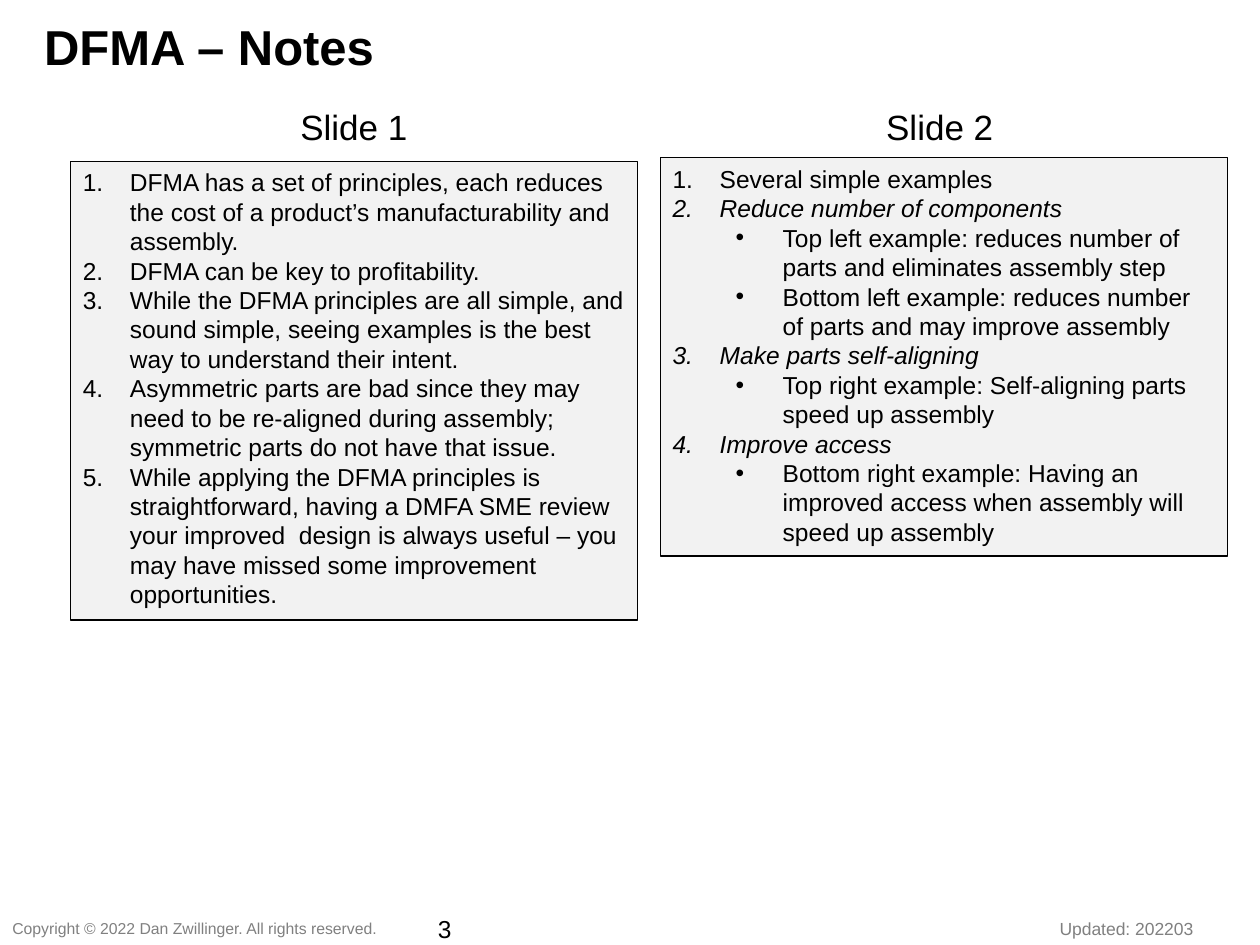
"""Build the DFMA notes slide."""
from dataclasses import dataclass

from lxml import etree
from pptx import Presentation
from pptx.dml.color import RGBColor
from pptx.enum.shapes import MSO_SHAPE
from pptx.enum.text import MSO_ANCHOR, PP_ALIGN
from pptx.oxml.ns import qn
from pptx.util import Cm, Pt

RECT = MSO_SHAPE.RECTANGLE
TOP = MSO_ANCHOR.TOP
LEFT, MID, RIGHT = PP_ALIGN.LEFT, PP_ALIGN.CENTER, PP_ALIGN.RIGHT
COLORS = {"ink": "000000", "gray": "808080", "panel": "F2F2F2"}
FONT = "Arial"
HANG = Cm(0.95)
STEP = Cm(1.27)
WIDTH = 11.43


@dataclass
class Item:
    text: str
    level: int = 0
    italic: bool = False


@dataclass
class Label:
    text: str
    box: tuple
    size: int
    color: str = "ink"
    bold: bool = False
    align: PP_ALIGN = LEFT
    wrap: bool = True


@dataclass
class Panel:
    box: tuple
    items: list


LABELS = [
    Label("DFMA – Notes", (0.64, 0.2, 24.1, 1.45), 28, bold=True),
    Label("Slide 1", (1.42, 2.01, WIDTH, 1.12), 20, align=MID),
    Label("Slide 2", (13.23, 2.01, WIDTH, 1.12), 20, align=MID),
    Label("Copyright © 2022 Dan Zwillinger. All rights reserved.",
          (0, 18.39, 7.95, 0.64), 9, "gray", wrap=False),
    Label("Updated: 202203", (21.11, 18.39, 3.23, 0.69), 10, "gray", wrap=False),
    Label("3", (7.95, 18.31, 1.4, 0.69), 14, align=RIGHT),
]
PANELS = [
    Panel((1.42, 3.25, WIDTH, 9.25), [
        Item("DFMA has a set of principles, each reduces the cost of a "
             "product’s manufacturability and assembly."),
        Item("DFMA can be key to profitability."),
        Item("While the DFMA principles are all simple, and sound simple, "
             "seeing examples is the best way to understand their intent."),
        Item("Asymmetric parts are bad since they may need to be re-aligned "
             "during assembly; symmetric parts do not have that issue."),
        Item("While applying the DFMA principles is straightforward, having a "
             "DMFA SME review your improved  design is always useful – you "
             "may have missed some improvement opportunities."),
    ]),
    Panel((13.31, 3.18, WIDTH, 8.03), [
        Item("Several simple examples"),
        Item("Reduce number of components", italic=True),
        Item("Top left example: reduces number of parts and eliminates "
             "assembly step", 1),
        Item("Bottom left example: reduces number of parts and may improve "
             "assembly", 1),
        Item("Make parts self-aligning", italic=True),
        Item("Top right example: Self-aligning parts speed up assembly", 1),
        Item("Improve access", italic=True),
        Item("Bottom right example: Having an improved access when assembly "
             "will speed up assembly", 1),
    ]),
]


def write(para, text: str, *, size: int, color: str = "ink", bold: bool = False,
          italic: bool = False, align: PP_ALIGN = LEFT) -> None:
    """Add formatted text to a paragraph."""
    para.alignment = align
    run = para.add_run()
    run.text = text
    font = run.font
    font.name, font.size = FONT, Pt(size)
    font.bold, font.italic = bold, italic
    font.color.rgb = RGBColor.from_string(COLORS[color])


def mark(para, level: int) -> None:
    """Give a paragraph its number or bullet and hanging indent."""
    para.level = level
    props = para._p.get_or_add_pPr()
    props.set("marL", str(HANG + level * STEP))
    props.set("indent", str(-HANG))
    etree.SubElement(props, qn("a:buFont"), typeface=FONT)
    if level:
        etree.SubElement(props, qn("a:buChar"), char="•")
    else:
        etree.SubElement(props, qn("a:buAutoNum"), type="arabicPeriod")


def draw_label(slide, label: Label) -> None:
    """Draw one line of free text."""
    frame = slide.shapes.add_textbox(*map(Cm, label.box)).text_frame
    frame.word_wrap = label.wrap
    write(frame.paragraphs[0], label.text, size=label.size, color=label.color,
          bold=label.bold, align=label.align)


def draw_panel(slide, panel: Panel) -> None:
    """Draw a framed list of notes."""
    shape = slide.shapes.add_shape(RECT, *map(Cm, panel.box))
    shape.shadow.inherit = False
    shape.fill.solid()
    shape.fill.fore_color.rgb = RGBColor.from_string(COLORS["panel"])
    shape.line.color.rgb = RGBColor.from_string(COLORS["ink"])
    shape.line.width = Pt(0.75)
    frame = shape.text_frame
    frame.word_wrap = True
    frame.vertical_anchor = TOP
    for index, item in enumerate(panel.items):
        para = frame.add_paragraph() if index else frame.paragraphs[0]
        mark(para, item.level)
        write(para, item.text, size=14, italic=item.italic)


def main() -> None:
    """Build and save the slide."""
    deck = Presentation()
    deck.slide_width, deck.slide_height = Cm(25.4), Cm(19.05)
    slide = deck.slides.add_slide(deck.slide_layouts[6])
    for label in LABELS:
        draw_label(slide, label)
    for panel in PANELS:
        draw_panel(slide, panel)
    deck.save("out.pptx")


if __name__ == "__main__":
    main()
